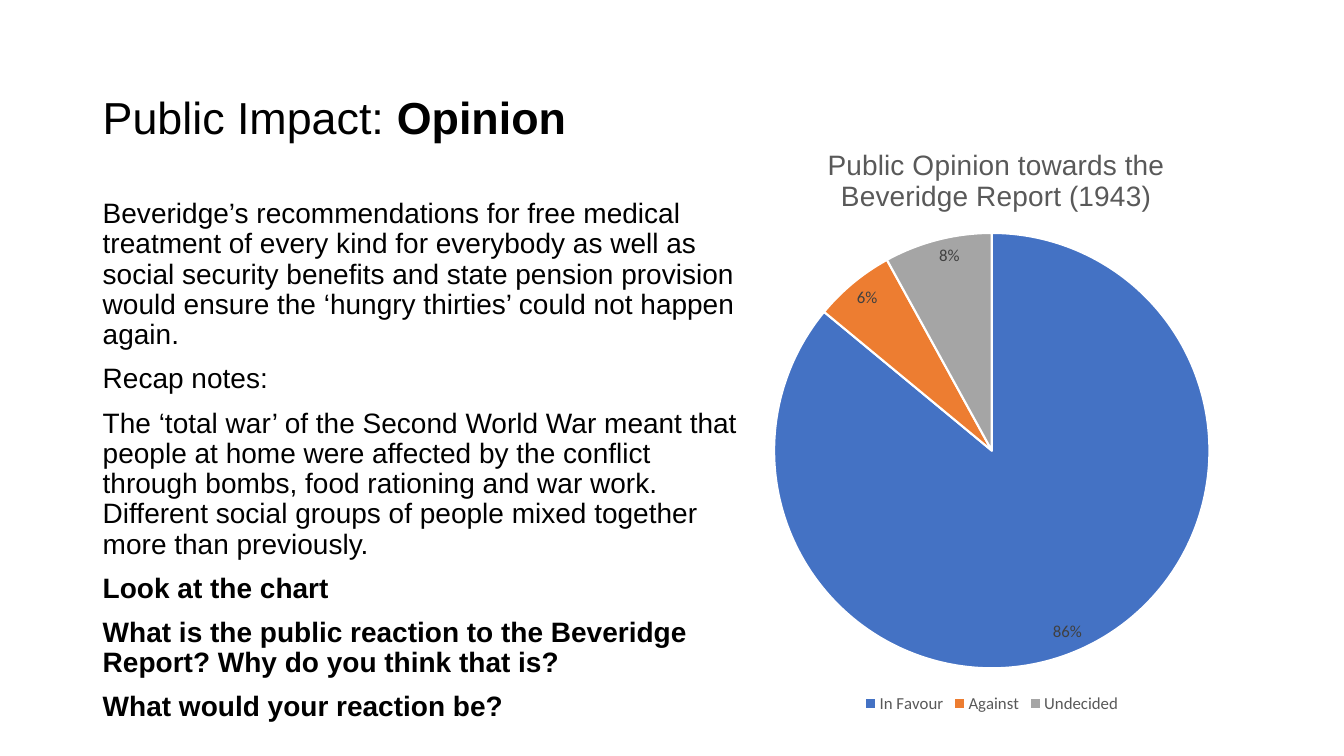
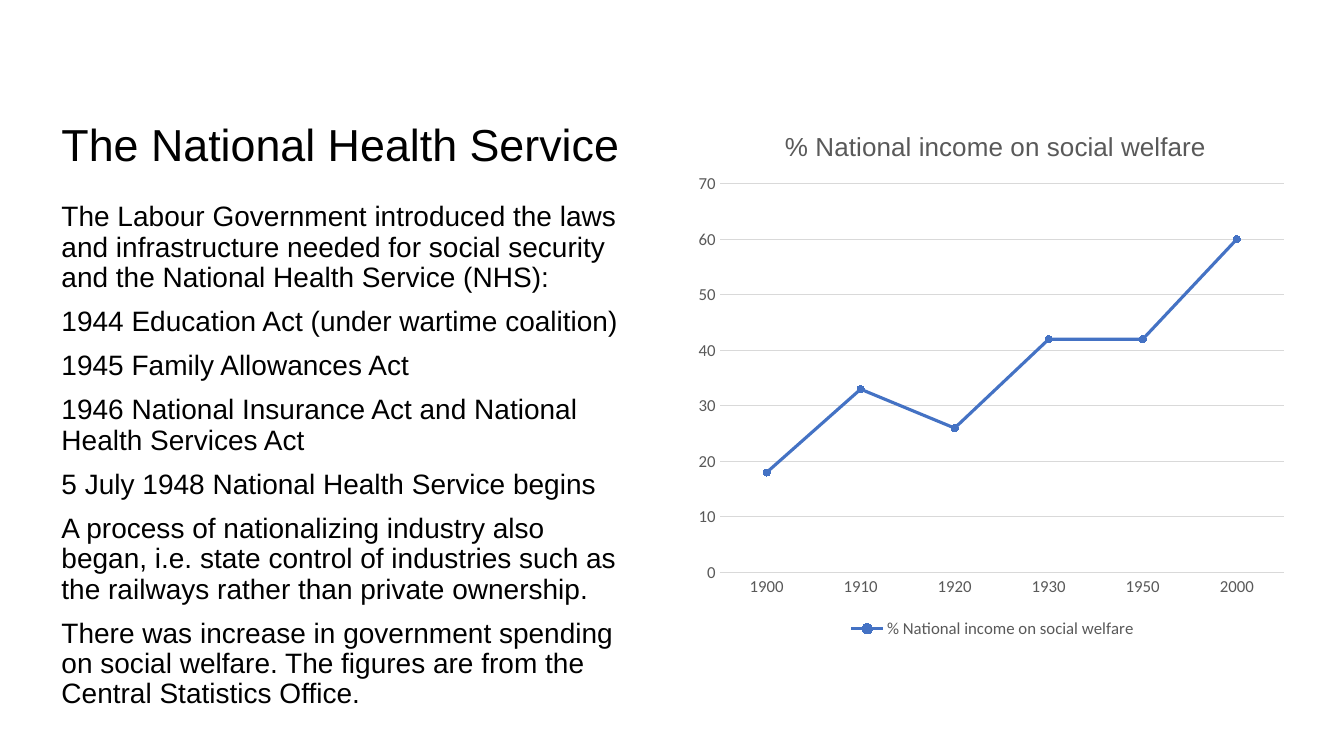
from lxml.etree import SubElement
from pptx import Presentation
from pptx.chart.data import CategoryChartData
from pptx.dml.color import RGBColor
from pptx.enum.chart import XL_CHART_TYPE as ChartType
from pptx.enum.chart import XL_LABEL_POSITION as LabelPosition
from pptx.enum.chart import XL_LEGEND_POSITION as LegendPosition
from pptx.enum.chart import XL_MARKER_STYLE as MarkerStyle
from pptx.enum.chart import XL_TICK_MARK as TickMark
from pptx.enum.text import MSO_ANCHOR as Anchor
from pptx.oxml import parse_xml
from pptx.oxml.ns import nsdecls, qn
from pptx.util import Cm, Pt

BLACK, GREY, LABEL_GREY, GRID, WHITE = "000000", "595959", "404040", "D9D9D9", "FFFFFF"
BLUE, ORANGE, SILVER = "4472C4", "ED7D31", "A5A5A5"


def rgb(value):
    return RGBColor.from_string(value)


def set_layout(parent, index, **fractions):
    """Place a chart part by fractions of the chart's size."""
    for old in parent.findall(qn("c:layout")):
        parent.remove(old)
    layout = parse_xml(f"<c:layout {nsdecls('c')}/>")
    manual = SubElement(layout, qn("c:manualLayout"))
    if "w" in fractions:
        SubElement(manual, qn("c:layoutTarget")).set("val", "inner")
    for axis in "xy":
        SubElement(manual, qn(f"c:{axis}Mode")).set("val", "edge")
    for name, fraction in fractions.items():
        SubElement(manual, qn(f"c:{name}")).set("val", str(fraction))
    parent.insert(index, layout)


class Deck:
    text_font, chart_font = "Arial", "Calibri"
    title_size, body_size, chart_size = 32, 20, 12

    def __init__(self):
        self.presentation = Presentation()
        self.presentation.slide_width = Cm(33.87)
        self.presentation.slide_height = Cm(19.05)
        self.slide = None

    def add_slide(self):
        self.slide = self.presentation.slides.add_slide(self.presentation.slide_layouts[6])

    def style(self, font, name, size, color, bold=False):
        font.name, font.size, font.bold = name, Pt(size), bold
        font.color.rgb = rgb(color)

    def text(self, box, paragraphs, size, anchor=Anchor.TOP, space_before=0):
        """Add paragraphs, each a list of (text, bold) runs."""
        frame = self.slide.shapes.add_textbox(*map(Cm, box)).text_frame
        frame.word_wrap = True
        frame.vertical_anchor = anchor
        for number, runs in enumerate(paragraphs):
            paragraph = frame.add_paragraph() if number else frame.paragraphs[0]
            paragraph.line_spacing = 0.9
            paragraph.space_before = Pt(space_before)
            for content, bold in runs:
                run = paragraph.add_run()
                run.text = content
                self.style(run.font, self.text_font, size, BLACK, bold)

    def title(self, box, *runs):
        self.text(box, [runs], self.title_size, Anchor.BOTTOM)

    def body(self, box, plain, bold=()):
        paragraphs = [[(line, False)] for line in plain] + [[(line, True)] for line in bold]
        self.text(box, paragraphs, self.body_size, space_before=10)

    def chart(self, kind, box, title, title_size, name, values, plot_area):
        """Add a titled one-series chart; values maps category to value."""
        data = CategoryChartData()
        data.categories = list(values)
        data.add_series(name, list(values.values()))
        chart = self.slide.shapes.add_chart(kind, *map(Cm, box), data).chart
        self.style(chart.font, self.chart_font, self.chart_size, GREY)

        chart.has_title = True
        run = chart.chart_title.text_frame.paragraphs[0].add_run()
        run.text = title
        self.style(run.font, self.text_font, title_size, GREY)
        chart.chart_title.include_in_layout = False
        set_layout(chart.chart_title.element, 1, x=0.15, y=0.04)
        set_layout(chart.element.find(f".//{qn('c:plotArea')}"), 0, **plot_area)

        chart.has_legend = True
        chart.legend.position = LegendPosition.BOTTOM
        chart.legend.include_in_layout = False
        self.style(chart.legend.font, self.chart_font, self.chart_size, GREY)
        return chart

    def pie_chart(self, *args, colors):
        plot = self.chart(ChartType.PIE, *args).plots[0]
        plot.vary_by_categories = True
        for number, color in enumerate(colors):
            slice_format = plot.series[0].points[number].format
            slice_format.fill.solid()
            slice_format.fill.fore_color.rgb = rgb(color)
            slice_format.line.color.rgb = rgb(WHITE)
            slice_format.line.width = Pt(1.5)
        plot.has_data_labels = True
        labels = plot.data_labels
        labels.show_value = True
        labels.show_percentage = False
        labels.number_format, labels.number_format_is_linked = "0%", False
        labels.position = LabelPosition.INSIDE_END
        self.style(labels.font, self.chart_font, self.chart_size, LABEL_GREY)

    def line_chart(self, *args, maximum, step):
        chart = self.chart(ChartType.LINE_MARKERS, *args)
        chart.plots[0].vary_by_categories = False
        series = chart.plots[0].series[0]
        series.smooth = False
        series.format.line.color.rgb = rgb(BLUE)
        series.format.line.width = Pt(2.25)
        series.marker.style, series.marker.size = MarkerStyle.CIRCLE, 5
        series.marker.format.fill.solid()
        series.marker.format.fill.fore_color.rgb = rgb(BLUE)
        series.marker.format.line.color.rgb = rgb(BLUE)

        for axis in (chart.category_axis, chart.value_axis):
            axis.major_tick_mark = axis.minor_tick_mark = TickMark.NONE
            self.style(axis.tick_labels.font, self.chart_font, self.chart_size, GREY)
        value_axis = chart.value_axis
        value_axis.minimum_scale, value_axis.maximum_scale = 0, maximum
        value_axis.major_unit = step
        value_axis.has_major_gridlines = True
        value_axis.format.line.fill.background()
        for line in (chart.category_axis.format.line, value_axis.major_gridlines.format.line):
            line.color.rgb = rgb(GRID)
            line.width = Pt(0.75)


def add_opinion_slide(deck):
    deck.add_slide()
    deck.title((2.34, 1.6, 12.37, 2.16), ("Public Impact: ", False), ("Opinion", True))
    deck.body(
        (2.34, 4.9, 16.56, 12.01),
        [
            "Beveridge’s recommendations for free medical treatment of every kind for everybody "
            "as well as social security benefits and state pension provision would ensure the "
            "‘hungry thirties’ could not happen again.",
            "Recap notes:",
            "The ‘total war’ of the Second World War meant that people at home were affected by "
            "the conflict through bombs, food rationing and war work. Different social groups of "
            "people mixed together more than previously.",
        ],
        [
            "Look at the chart",
            "What is the public reaction to the Beveridge Report? Why do you think that is?",
            "What would your reaction be?",
        ],
    )
    deck.pie_chart(
        (18.9, 2.97, 12.19, 15.11),
        "Public Opinion towards the Beveridge Report (1943)", 20, "Series 1",
        {"In Favour": 0.86, "Against": 0.06, "Undecided": 0.08},
        {"x": 0.05, "y": 0.19, "w": 0.9, "h": 0.73},
        colors=(BLUE, ORANGE, SILVER),
    )


def add_health_service_slide(deck):
    deck.add_slide()
    deck.title((1.3, 1.27, 15.01, 3.18), ("The National Health Service", False))
    measure = "% National income on social welfare"
    deck.line_chart(
        (17.37, 2.59, 15.29, 13.61), measure, 18.6, measure,
        {"1900": 18, "1910": 33, "1920": 26, "1930": 42, "1950": 42, "2000": 60},
        {"x": 0.05, "y": 0.15, "w": 0.93, "h": 0.72},
        maximum=70, step=10,
    )
    deck.body(
        (1.3, 4.98, 15.01, 13.16),
        [
            "The Labour Government introduced the laws and infrastructure needed for social "
            "security and the National Health Service (NHS):",
            "1944 Education Act (under wartime coalition)",
            "1945 Family Allowances Act",
            "1946 National Insurance Act and National Health Services Act",
            "5 July 1948 National Health Service begins",
            "A process of nationalizing industry also began, i.e. state control of industries "
            "such as the railways rather than private ownership.",
            "There was increase in government spending on social welfare. The figures are from "
            "the Central Statistics Office.",
        ],
    )


def main():
    deck = Deck()
    add_opinion_slide(deck)
    add_health_service_slide(deck)
    deck.presentation.save("out.pptx")


if __name__ == "__main__":
    main()
